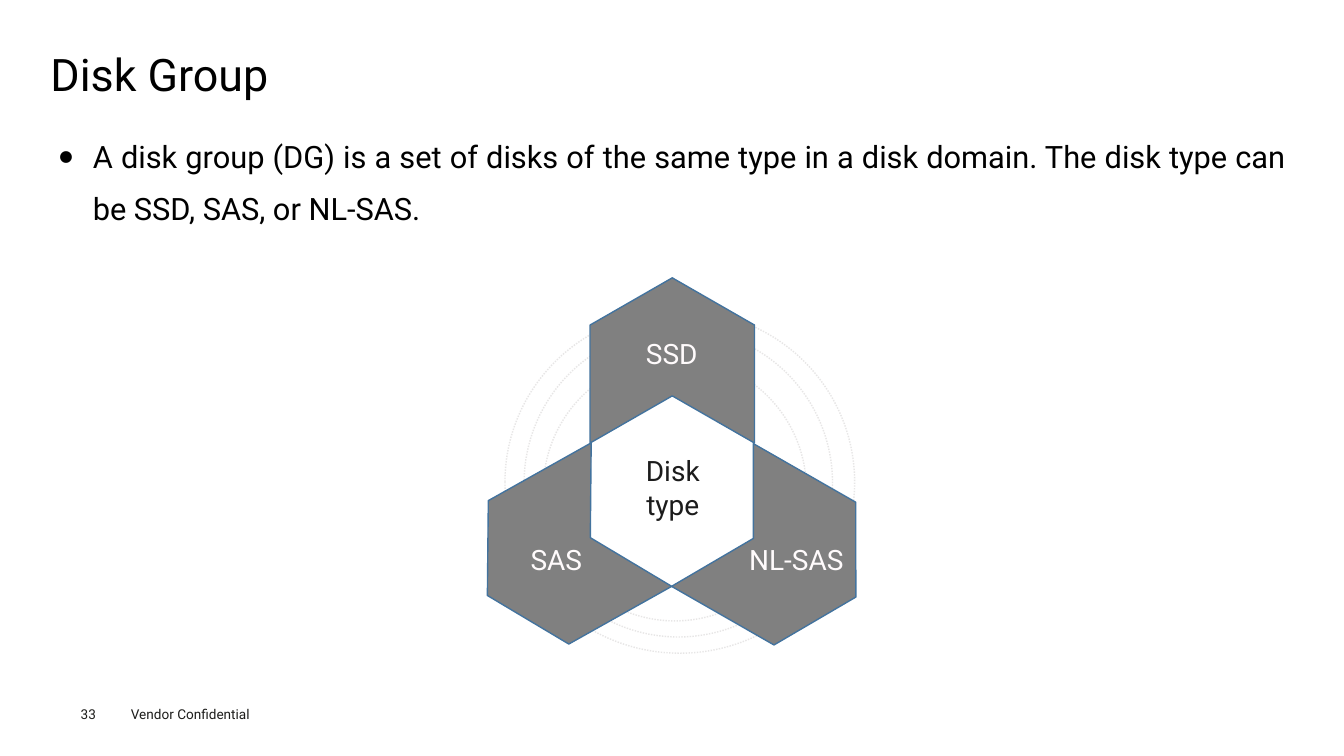
import pptx
import pptx.dml.color
import pptx.enum.dml
import pptx.enum.shapes
import pptx.enum.text
import pptx.oxml
import pptx.oxml.ns
import pptx.util

Pt = pptx.util.Pt
RGBColor = pptx.dml.color.RGBColor
ALIGN = pptx.enum.text.PP_ALIGN
ANCHOR = pptx.enum.text.MSO_ANCHOR
SHAPE = pptx.enum.shapes.MSO_SHAPE

FONT = "Roboto"
BLACK = RGBColor(0x00, 0x00, 0x00)
FOOTER_TEXT = RGBColor(0x1D, 0x1D, 0x1B)
CENTER_TEXT = RGBColor(0x1C, 0x1C, 0x1C)
CHEVRON_TEXT = RGBColor(0xFF, 0xFB, 0xFC)
CHEVRON_FILL = RGBColor(0x80, 0x80, 0x80)
CHEVRON_LINE = RGBColor(0x43, 0x73, 0x9E)
RING_LINE = RGBColor(0xE7, 0xE6, 0xE6)

CHEVRON_SIZE = (118, 117.5)
CHEVRON_POINT = 0.287

# left, top, width, height
RINGS = [
    (360.7, 221.8, 249.8, 244.8),
    (374.4, 234.7, 220.3, 220.3),
    (388.1, 255.6, 187.9, 187.9),
]
# chevron left, top and rotation; label, its left, top and width
DISK_TYPES = [
    (340.6, 337.7, 150.7, "SAS", 360.7, 383.8, 73.4),
    (421.2, 198.7, 270, "SSD", 415.4, 236.9, 128.9),
    (501.1, 338.4, 29.8, "NL-SAS", 521.3, 383.8, 95),
]


def add_text(slide, box, lines, size, color, align=ALIGN.LEFT,
             insets=(7.2, 3.6), anchor=ANCHOR.TOP):
    """Add a text box with one paragraph per line; insets are side and top."""
    shape = slide.shapes.add_textbox(*map(Pt, box))
    frame = shape.text_frame
    frame.word_wrap = True
    frame.vertical_anchor = anchor
    frame.margin_left = frame.margin_right = Pt(insets[0])
    frame.margin_top = frame.margin_bottom = Pt(insets[1])
    for index, line in enumerate(lines):
        paragraph = frame.add_paragraph() if index else frame.paragraphs[0]
        paragraph.alignment = align
        run = paragraph.add_run()
        run.text = line
        run.font.name = FONT
        run.font.size = Pt(size)
        run.font.color.rgb = color
    return frame


def add_bullet(paragraph, indent):
    properties = paragraph._p.get_or_add_pPr()
    properties.set("marL", str(Pt(indent)))
    properties.set("indent", str(-Pt(indent)))
    for tag, name, value in (("a:buSzPct", "val", "50000"),
                             ("a:buFont", "typeface", FONT),
                             ("a:buChar", "char", "●")):
        element = pptx.oxml.parse_xml(
            f'<{tag} {pptx.oxml.ns.nsdecls("a")} {name}="{value}"/>')
        properties.append(element)


def add_outlined_shape(slide, kind, box, line_color):
    shape = slide.shapes.add_shape(kind, *map(Pt, box))
    shape.shadow.inherit = False
    shape.line.color.rgb = line_color
    shape.line.width = Pt(1)
    return shape


def add_ring(slide, box):
    ring = add_outlined_shape(slide, SHAPE.OVAL, box, RING_LINE)
    ring.fill.background()
    ring.line.dash_style = pptx.enum.dml.MSO_LINE.ROUND_DOT


def add_chevron(slide, left, top, rotation):
    chevron = add_outlined_shape(
        slide, SHAPE.CHEVRON, (left, top, *CHEVRON_SIZE), CHEVRON_LINE)
    chevron.adjustments[0] = CHEVRON_POINT
    chevron.rotation = rotation
    chevron.fill.solid()
    chevron.fill.fore_color.rgb = CHEVRON_FILL


def add_diagram(slide):
    for box in RINGS:
        add_ring(slide, box)
    for left, top, rotation, *_ in DISK_TYPES:
        add_chevron(slide, left, top, rotation)
    add_text(slide, (421.9, 320.4, 117.4, 55.4), ["Disk", "type"], 20,
             CENTER_TEXT, ALIGN.CENTER)
    for *_, label, left, top, width in DISK_TYPES:
        add_text(slide, (left, top, width, 31.7), [label], 20,
                 CHEVRON_TEXT, ALIGN.CENTER)


def main():
    presentation = pptx.Presentation()
    presentation.slide_width = Pt(960)
    presentation.slide_height = Pt(540)
    slide = presentation.slides.add_slide(presentation.slide_layouts[6])

    add_text(slide, (86.4, 500.4, 115.2, 19.4), ["Vendor Confidential"], 9.7,
             FOOTER_TEXT)
    add_text(slide, (57.6, 504, 39.6, 11.5), ["33"], 9.7, FOOTER_TEXT,
             insets=(0, 0))

    title = add_text(slide, (36, 35.3, 889.2, 38.9), ["Disk Group"], 32, BLACK,
                     insets=(0, 0), anchor=ANCHOR.MIDDLE)
    title.paragraphs[0].line_spacing = 0.9

    body = add_text(
        slide, (36, 85, 889.2, 381.6),
        ["A disk group (DG) is a set of disks of the same type in a disk "
         "domain. The disk type can be SSD, SAS, or NL-SAS."],
        22, BLACK, ALIGN.JUSTIFY, insets=(6.5, 3))
    add_bullet(body.paragraphs[0], 23.8)
    body.paragraphs[0].line_spacing = 1.4

    add_diagram(slide)
    presentation.save("out.pptx")


if __name__ == "__main__":
    main()
